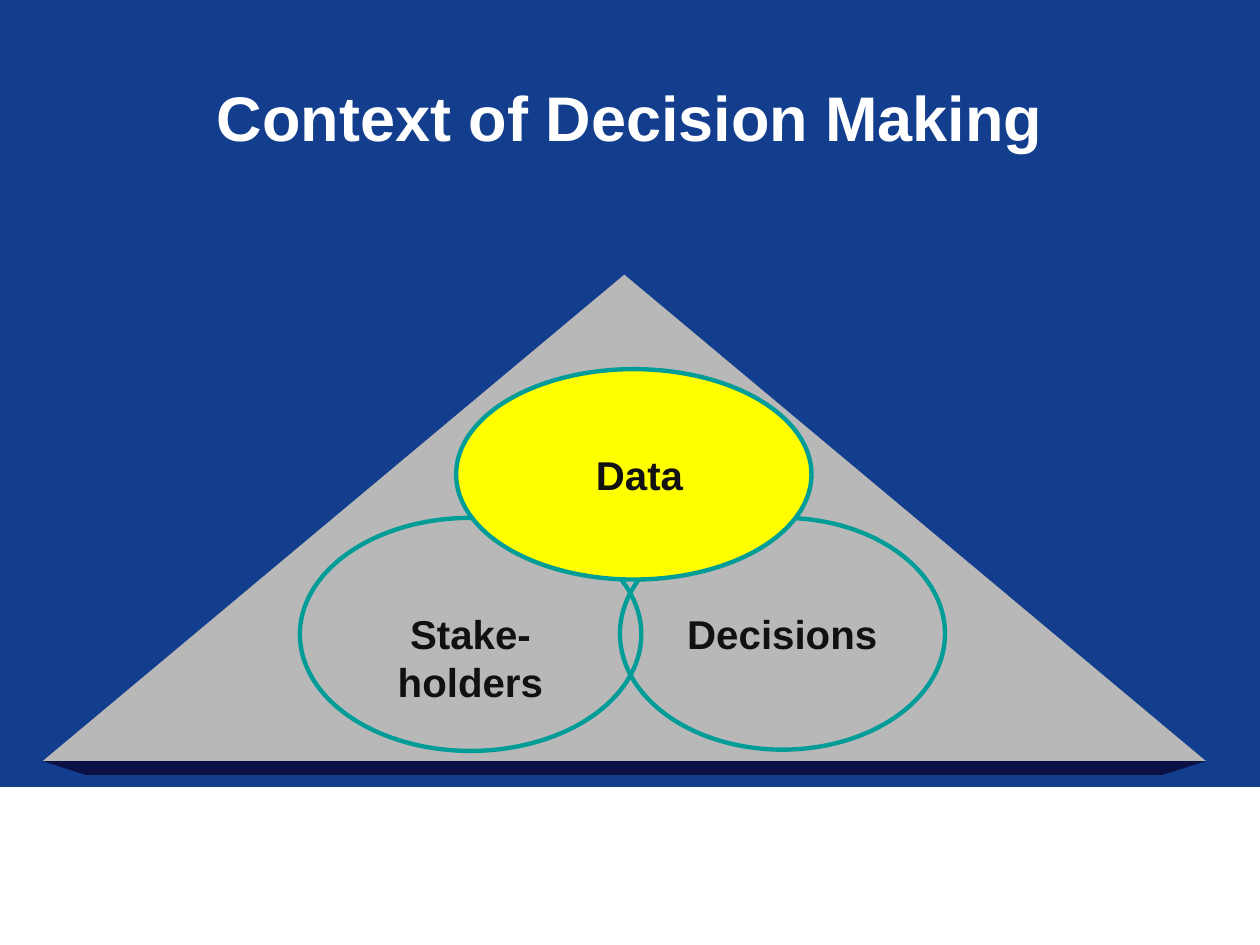
from typing import NamedTuple, Optional

from pptx import Presentation
from pptx.dml.color import RGBColor
from pptx.enum.shapes import MSO_SHAPE
from pptx.enum.text import MSO_ANCHOR, PP_ALIGN
from pptx.util import Inches, Pt

NAVY, BASE, GREY, WHITE = "133D8D", "0B1045", "B8B8B8", "FFFFFF"
TEAL, YELLOW, INK = "009C98", "FFFF00", "111111"


class Oval(NamedTuple):
    text: str
    left: float
    top: float
    width: float
    height: float
    fill: Optional[str] = None
    inset_left: float = 0.1
    inset_top: float = 0.05


OVALS = [
    Oval("Stake-holders", 2.38, 4.11, 2.71, 1.85, inset_top=0.42),
    Oval("Decisions", 4.92, 4.11, 2.58, 1.84),
    Oval("Data", 3.62, 2.93, 2.82, 1.67, YELLOW, inset_left=0.19),
]


def rgb(color: str) -> RGBColor:
    return RGBColor.from_string(color)


def paint(sp, fill: Optional[str], line: Optional[str] = None, width: float = 0.75) -> None:
    sp.shadow.inherit = False
    if fill:
        sp.fill.solid()
        sp.fill.fore_color.rgb = rgb(fill)
    else:
        sp.fill.background()
    if line:
        sp.line.color.rgb = rgb(line)
        sp.line.width = Pt(width)
    else:
        sp.line.fill.background()


def add_preset(s, kind: MSO_SHAPE, left: float, top: float, width: float, height: float):
    return s.shapes.add_shape(kind, Inches(left), Inches(top), Inches(width), Inches(height))


def write(sp, text: str, size: float, color: str) -> None:
    tf = sp.text_frame
    tf.word_wrap = True
    tf.vertical_anchor = MSO_ANCHOR.MIDDLE
    p = tf.paragraphs[0]
    p.text = text
    p.alignment = PP_ALIGN.CENTER
    p.font.name = "Arial"
    p.font.size = Pt(size)
    p.font.bold = True
    p.font.color.rgb = rgb(color)


def add_pyramid(s, left: float, top: float, width: float, height: float) -> None:
    """Draw the triangle and the dark underside along its base."""
    paint(add_preset(s, MSO_SHAPE.ISOSCELES_TRIANGLE, left, top, width, height), GREY)
    right, bottom = left + width, top + height
    depth, slant = 0.11, 0.34
    builder = s.shapes.build_freeform(Inches(left), Inches(bottom))
    builder.add_line_segments([
        (Inches(right), Inches(bottom)),
        (Inches(right - slant), Inches(bottom + depth)),
        (Inches(left + slant), Inches(bottom + depth)),
    ])
    paint(builder.convert_to_shape(), BASE)


def add_oval(s, oval: Oval) -> None:
    sp = add_preset(s, MSO_SHAPE.OVAL, oval.left, oval.top, oval.width, oval.height)
    paint(sp, oval.fill, TEAL, 2.5)
    write(sp, oval.text, 23, INK)
    sp.text_frame.margin_left = Inches(oval.inset_left)
    sp.text_frame.margin_top = Inches(oval.inset_top)


def main() -> None:
    prs = Presentation()
    prs.slide_width, prs.slide_height = Inches(10), Inches(7.5)
    s = prs.slides.add_slide(prs.slide_layouts[6])
    s.background.fill.solid()
    s.background.fill.fore_color.rgb = rgb(NAVY)

    paint(add_preset(s, MSO_SHAPE.RECTANGLE, 0, 6.25, 10, 1.25), WHITE, WHITE)
    add_pyramid(s, 0.34, 2.18, 9.23, 3.86)
    title = s.shapes.add_textbox(Inches(0.75), Inches(0.3), Inches(8.5), Inches(1.25))
    write(title, "Context of Decision Making", 36, WHITE)
    for oval in OVALS:
        add_oval(s, oval)
    prs.save("out.pptx")


if __name__ == "__main__":
    main()
